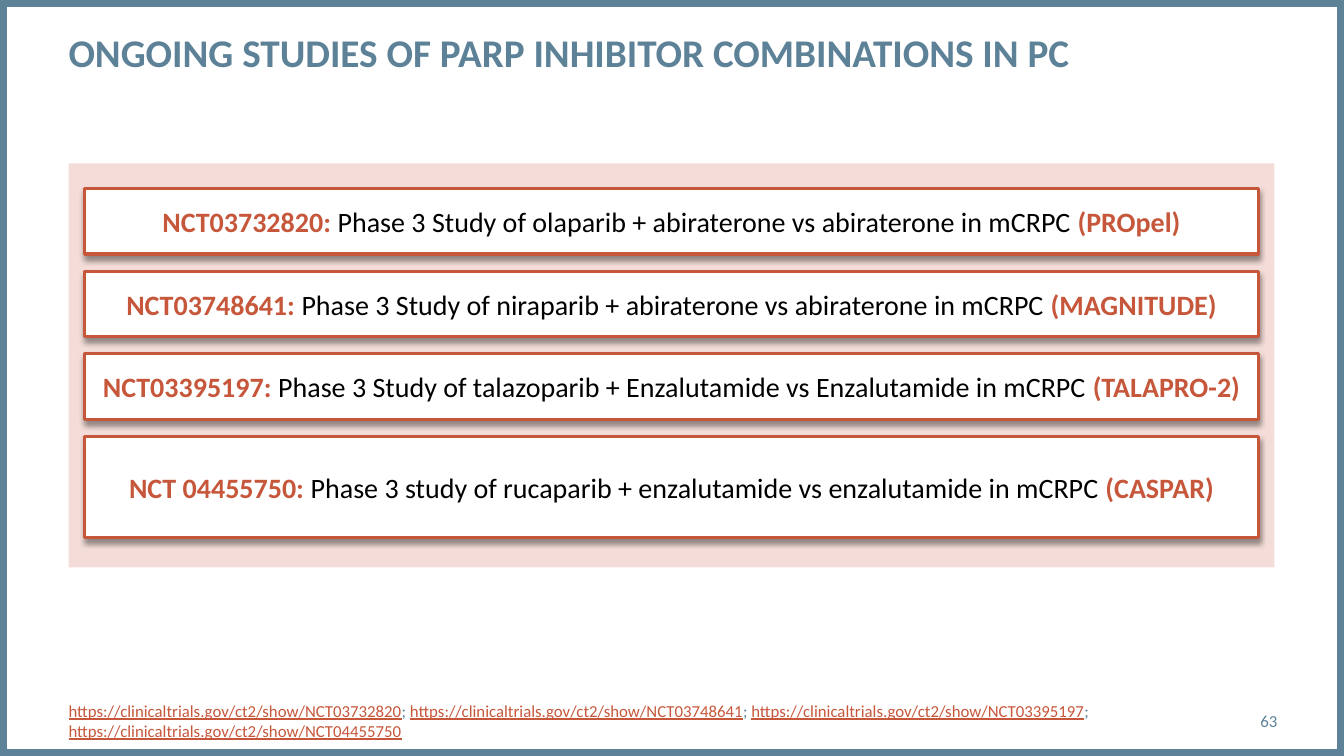
from lxml import etree
from pptx import Presentation, util as u
from pptx.dml.color import RGBColor
from pptx.enum import shapes, text
from pptx.oxml import ns

WIDE, HIGH = 13.33, 7.5
BLUE, RUST, PINK = "5D8298", "C6573B", "F4DDD8"
BLACK, WHITE = "000000", "FFFFFF"
LEFT = 0.68
TRIALS = [
    ("NCT03732820: ", "Phase 3 Study of olaparib + abiraterone vs abiraterone in mCRPC ", "(PROpel)"),
    ("NCT03748641: ", "Phase 3 Study of niraparib + abiraterone vs abiraterone in mCRPC ", "(MAGNITUDE)"),
    ("NCT03395197: ", "Phase 3 Study of talazoparib + Enzalutamide vs Enzalutamide in mCRPC ", "(TALAPRO-2)"),
    ("NCT 04455750: ", "Phase 3 study of rucaparib + enzalutamide vs enzalutamide in mCRPC ", "(CASPAR)"),
]
HEIGHTS = [0.65, 0.65, 0.65, 1]
LINKS = ["https://clinicaltrials.gov/ct2/show/" + code
         for code in ("NCT03732820", "NCT03748641", "NCT03395197", "NCT04455750")]


def paint(part, tone):
    """Apply a hex colour to a fill's or font's colour."""
    part.rgb = RGBColor.from_string(tone)


def add_box(slide, box, fill=None, line=None, width=0):
    """Draw a rectangle with an optional fill and outline."""
    shape = slide.shapes.add_shape(shapes.MSO_SHAPE.RECTANGLE, *map(u.Inches, box))
    shape.shadow.inherit = False
    if fill:
        shape.fill.solid()
        paint(shape.fill.fore_color, fill)
    else:
        shape.fill.background()
    if line:
        paint(shape.line.color, line)
        shape.line.width = u.Pt(width)
    else:
        shape.line.fill.background()
    return shape


def add_shade(shape):
    """Give a shape a soft shadow that falls straight down."""
    effects = shape._element.spPr.find(ns.qn("a:effectLst"))
    outer = etree.SubElement(effects, ns.qn("a:outerShdw"), blurRad=str(u.Pt(4)),
                             dist=str(u.Pt(3)), dir="5400000", rotWithShape="0")
    tone = etree.SubElement(outer, ns.qn("a:srgbClr"), val=BLACK)
    etree.SubElement(tone, ns.qn("a:alpha"), val="40000")


def write(frame, runs, size, align=text.PP_ALIGN.LEFT, bold=None):
    """Write one paragraph of (words, colour, bold, underline) runs."""
    frame.word_wrap = True
    para = frame.paragraphs[0]
    para.alignment = align
    para.font.size = u.Pt(size)
    para.font.name = "Calibri"
    para.font.bold = bold
    for words, tone, heavy, under in runs:
        run = para.add_run()
        run.text = words
        paint(run.font.color, tone)
        run.font.bold = heavy
        run.font.underline = under


def add_text(slide, box, runs, size, anchor=text.MSO_ANCHOR.MIDDLE, **style):
    """Place a text box without margins."""
    frame = slide.shapes.add_textbox(*map(u.Inches, box)).text_frame
    frame.margin_left = frame.margin_right = frame.margin_top = frame.margin_bottom = 0
    frame.vertical_anchor = anchor
    write(frame, runs, size, **style)


def add_panel(slide, box):
    """Draw the tinted panel and stack the trial cards in it."""
    left, top, width, height = box
    add_box(slide, box, PINK)
    inset, gap = 0.16, 0.17
    y = top + 0.25
    for (code, study, name), tall in zip(TRIALS, HEIGHTS):
        card = add_box(slide, (left + inset, y, width - 2 * inset, tall), WHITE, RUST, 2.25)
        add_shade(card)
        card.text_frame.vertical_anchor = text.MSO_ANCHOR.MIDDLE
        runs = [(code, RUST, True, None), (study, BLACK, False, None), (name, RUST, True, None)]
        write(card.text_frame, runs, 20, text.PP_ALIGN.CENTER)
        y += tall + gap


def add_foot(slide, box):
    """Set the source links and the page number on one band."""
    left, top, width, height = box
    runs = []
    for link in LINKS:
        if runs:
            runs.append(("; ", BLUE, None, None))
        runs.append((link, RUST, None, True))
    add_text(slide, box, runs, 12)
    add_text(slide, (11.5, top, 1.17, height), [("63", BLUE, None, None)], 12,
             align=text.PP_ALIGN.RIGHT)


def main():
    """Build the slide and save it."""
    deck = Presentation()
    deck.slide_width, deck.slide_height = u.Inches(WIDE), u.Inches(HIGH)
    slide = deck.slides.add_slide(deck.slide_layouts[6])
    add_box(slide, (0, 0, WIDE, HIGH), line=BLUE, width=10)
    title = "ONGOING STUDIES OF PARP INHIBITOR COMBINATIONS IN PC"
    add_text(slide, (LEFT, 0.28, 10.16, 0.94), [(title, BLUE, None, None)], 28,
             text.MSO_ANCHOR.TOP, bold=True)
    add_panel(slide, (LEFT, 1.62, 11.96, 4.01))
    add_foot(slide, (LEFT, 6.95, 12.37, 0.4))
    deck.save("out.pptx")


if __name__ == "__main__":
    main()
